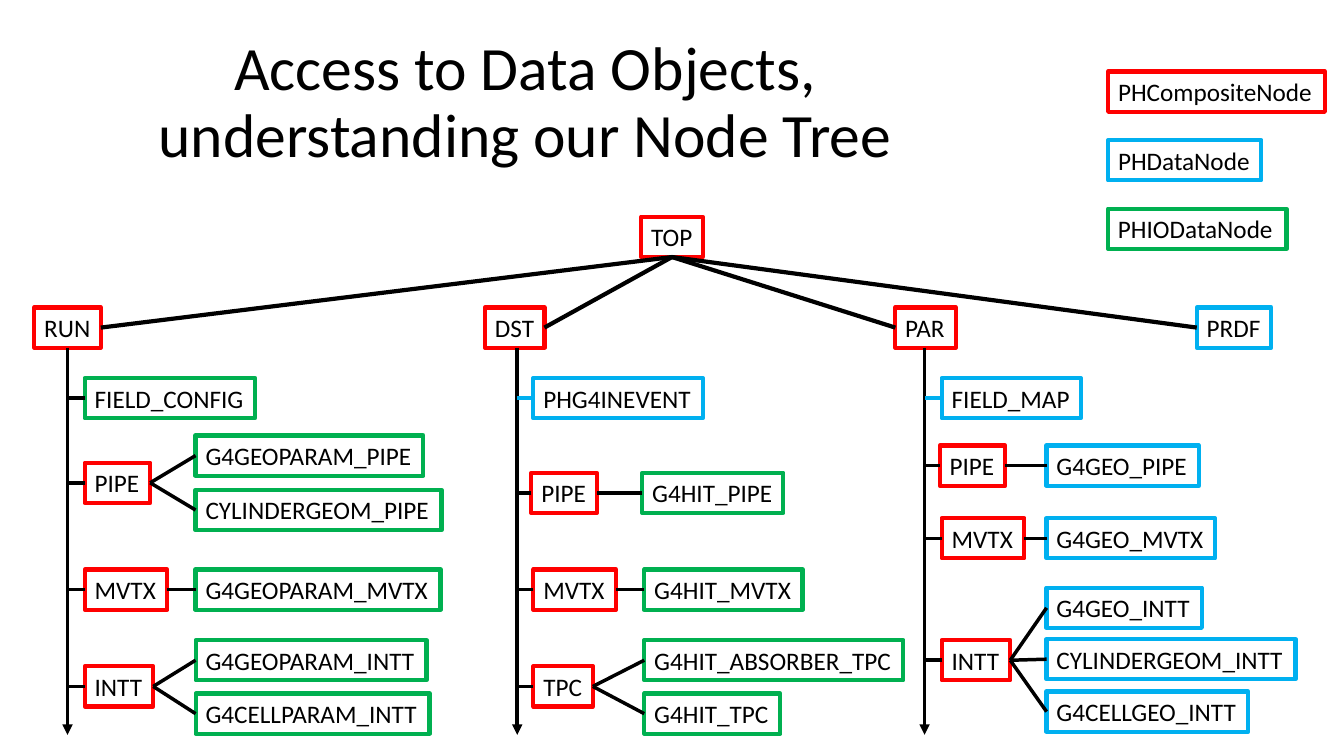
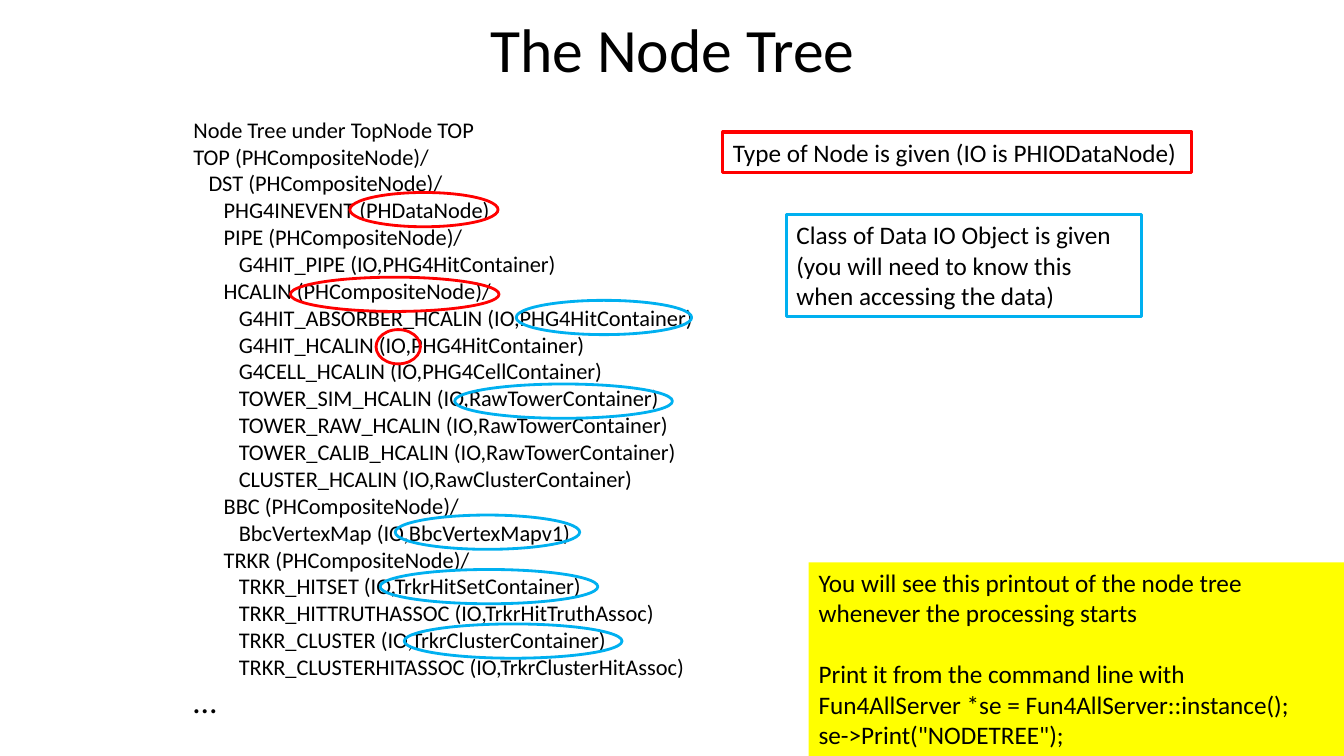
from lxml import etree
from pptx import Presentation
from pptx import util as u
from pptx.dml.color import RGBColor
from pptx.enum import shapes, text
from pptx.oxml.ns import qn

FONT = "Calibri"
BLACK, WHITE, YELLOW = "000000", "FFFFFF", "FFFF00"
COMPOSITE, DATA, IO = "FF0000", "00B0F0", "00B050"
NODE_HEIGHT = 0.4
LEVEL_INDENT = 0.15
TITLE_ONLY = 5


def color(value):
    return RGBColor.from_string(value)


def write(para, words, size=18, align=text.PP_ALIGN.LEFT, indent=0, before=0):
    """Fill one paragraph with formatted text."""
    if indent:
        properties = para._p.get_or_add_pPr()
        properties.set("marL", str(u.Inches(indent)))
        properties.set("indent", "0")
    para.alignment = align
    if before:
        para.space_before = u.Pt(before)
    span = para.add_run()
    span.text = words
    span.font.name = FONT
    span.font.size = u.Pt(size)
    span.font.color.rgb = color(BLACK)


def add_title(page, words, left, top, width, height):
    title = page.shapes.title
    title.left, title.top = u.Inches(left), u.Inches(top)
    title.width, title.height = u.Inches(width), u.Inches(height)
    frame = title.text_frame
    frame.auto_size = text.MSO_AUTO_SIZE.NONE
    frame.vertical_anchor = text.MSO_ANCHOR.MIDDLE
    frame.paragraphs[0].line_spacing = 0.9
    write(frame.paragraphs[0], words, size=44, align=text.PP_ALIGN.CENTER)


def add_box(page, paragraphs, left, top, width, height=NODE_HEIGHT,
            fill=None, line=None, weight=3, wrap=False):
    """Text box; each paragraph is a text with its format options."""
    box = page.shapes.add_textbox(u.Inches(left), u.Inches(top),
                                  u.Inches(width), u.Inches(height))
    if fill:
        box.fill.solid()
        box.fill.fore_color.rgb = color(fill)
    if line:
        box.line.color.rgb = color(line)
        box.line.width = u.Pt(weight)
    frame = box.text_frame
    frame.word_wrap = wrap
    frame.auto_size = text.MSO_AUTO_SIZE.SHAPE_TO_FIT_TEXT
    for index, (words, options) in enumerate(paragraphs):
        para = frame.add_paragraph() if index else frame.paragraphs[0]
        write(para, words, **options)
    return box


def add_node(page, name, line, left, top, width):
    add_box(page, [(name, {})], left, top, width, line=line)


def add_line(page, start, end, line=BLACK, weight=2.5, arrow=False):
    ends = [u.Inches(value) for value in (*start, *end)]
    link = page.shapes.add_connector(shapes.MSO_CONNECTOR.STRAIGHT, *ends)
    link.line.color.rgb = color(line)
    link.line.width = u.Pt(weight)
    if arrow:
        outline = link.line._get_or_add_ln()
        etree.SubElement(outline, qn("a:tailEnd"), type="triangle")
    etree.SubElement(link._element.spPr, qn("a:effectLst"))


def add_oval(page, line, left, top, width, height=0.34):
    oval = page.shapes.add_shape(shapes.MSO_SHAPE.OVAL, u.Inches(left), u.Inches(top),
                                 u.Inches(width), u.Inches(height))
    oval.shadow.inherit = False
    oval.fill.background()
    oval.line.color.rgb = color(line)
    oval.line.width = u.Pt(2)


# Top of the tree: name, kind, left, width
ROOTS = [
    ("RUN", COMPOSITE, 0.34, 0.66),
    ("DST", COMPOSITE, 4.81, 0.59),
    ("PAR", COMPOSITE, 8.88, 0.6),
    ("PRDF", DATA, 11.87, 0.74),
]

# Branches: name, kind, offset from spine, offset from root row, width,
# offset of children, children (name, offset from root row, width)
RUN_BRANCHES = [
    ("FIELD_CONFIG", IO, 0.17, 0.7, 1.69, 0, []),
    ("PIPE", COMPOSITE, 0.17, 1.54, 0.65, 1.27,
     [("G4GEOPARAM_PIPE", 1.27, 2.26), ("CYLINDERGEOM_PIPE", 1.81, 2.44)]),
    ("MVTX", COMPOSITE, 0.17, 2.6, 0.82, 1.27, [("G4GEOPARAM_MVTX", 2.6, 2.43)]),
    ("INTT", COMPOSITE, 0.17, 3.56, 0.68, 1.27,
     [("G4GEOPARAM_INTT", 3.3, 2.29), ("G4CELLPARAM_INTT", 3.83, 2.32)]),
]
DST_BRANCHES = [
    ("PHG4INEVENT", DATA, 0.16, 0.7, 1.68, 0, []),
    ("PIPE", COMPOSITE, 0.14, 1.64, 0.65, 1.24, [("G4HIT_PIPE", 1.64, 1.4)]),
    ("MVTX", COMPOSITE, 0.16, 2.6, 0.82, 1.26, [("G4HIT_MVTX", 2.6, 1.57)]),
    ("TPC", COMPOSITE, 0.16, 3.56, 0.59, 1.26,
     [("G4HIT_ABSORBER_TPC", 3.3, 2.57), ("G4HIT_TPC", 3.83, 1.35)]),
]
PAR_BRANCHES = [
    ("FIELD_MAP", DATA, 0.17, 0.7, 1.38, 0, []),
    ("PIPE", COMPOSITE, 0.15, 1.37, 0.65, 1.21, [("G4GEO_PIPE", 1.37, 1.51)]),
    ("MVTX", COMPOSITE, 0.17, 2.09, 0.82, 1.21, [("G4GEO_MVTX", 2.09, 1.67)]),
    ("INTT", COMPOSITE, 0.17, 3.3, 0.68, 1.21,
     [("G4GEO_INTT", 2.78, 1.54), ("CYLINDERGEOM_INTT", 3.29, 2.47),
      ("G4CELLGEO_INTT", 3.81, 2)]),
]


def draw_roots(page, left, top, width, root_top):
    """TOP node with a line to the near side of each root."""
    add_node(page, "TOP", COMPOSITE, left, top, width)
    hub = (left + width / 2, top + NODE_HEIGHT)
    for name, kind, root_left, root_width in ROOTS:
        add_node(page, name, kind, root_left, root_top, root_width)
        is_left = root_left < left
        near_side = root_left + root_width if is_left else root_left
        add_line(page, hub, (near_side, root_top + NODE_HEIGHT / 2), weight=3)


def draw_column(page, spine, top, branches, child_kind):
    """Downward arrow with its branches and their children."""
    middle = NODE_HEIGHT / 2
    add_line(page, (spine, top + NODE_HEIGHT), (spine, top + 4.24), arrow=True)
    for name, kind, shift, drop, width, child_shift, children in branches:
        left, center = spine + shift, top + drop + middle
        add_node(page, name, kind, left, top + drop, width)
        add_line(page, (left, center), (spine, center), DATA if kind == DATA else BLACK)
        for child, child_drop, child_width in children:
            child_left, child_top = spine + child_shift, top + child_drop
            add_node(page, child, child_kind, child_left, child_top, child_width)
            add_line(page, (child_left, child_top + middle), (left + width, center))


def draw_legend(page, left, top, step=0.68):
    entries = [("PHCompositeNode", COMPOSITE, 2.15), ("PHDataNode", DATA, 1.52),
               ("PHIODataNode", IO, 1.77)]
    for row, (name, kind, width) in enumerate(entries):
        add_node(page, name, kind, left, top + row * step, width)


def build_diagram_slide(deck):
    page = deck.slides.add_slide(deck.slide_layouts[TITLE_ONLY])
    add_title(page, "Access to Data Objects, understanding our Node Tree",
              0.48, 0.31, 9.46, 1.45)
    root_top = 3.05
    draw_roots(page, 6.36, 2.15, 0.61, root_top)
    draw_column(page, 0.67, root_top, RUN_BRANCHES, IO)
    draw_column(page, 5.13, root_top, DST_BRANCHES, IO)
    draw_column(page, 9.17, root_top, PAR_BRANCHES, DATA)
    draw_legend(page, 10.99, 0.71)


# Printout: level, text
PRINTOUT = [
    (0, "Node Tree under TopNode TOP"),
    (0, "TOP (PHCompositeNode)/"),
    (1, "DST (PHCompositeNode)/"),
    (2, "PHG4INEVENT (PHDataNode)"),
    (2, "PIPE (PHCompositeNode)/"),
    (3, "G4HIT_PIPE (IO,PHG4HitContainer)"),
    (2, "HCALIN (PHCompositeNode)/"),
    (3, "G4HIT_ABSORBER_HCALIN (IO,PHG4HitContainer)"),
    (3, "G4HIT_HCALIN (IO,PHG4HitContainer)"),
    (3, "G4CELL_HCALIN (IO,PHG4CellContainer)"),
    (3, "TOWER_SIM_HCALIN (IO,RawTowerContainer)"),
    (3, "TOWER_RAW_HCALIN (IO,RawTowerContainer)"),
    (3, "TOWER_CALIB_HCALIN (IO,RawTowerContainer)"),
    (3, "CLUSTER_HCALIN (IO,RawClusterContainer)"),
    (2, "BBC (PHCompositeNode)/"),
    (3, "BbcVertexMap (IO,BbcVertexMapv1)"),
    (2, "TRKR (PHCompositeNode)/"),
    (3, "TRKR_HITSET (IO,TrkrHitSetContainer)"),
    (3, "TRKR_HITTRUTHASSOC (IO,TrkrHitTruthAssoc)"),
    (3, "TRKR_CLUSTER (IO,TrkrClusterContainer)"),
    (3, "TRKR_CLUSTERHITASSOC (IO,TrkrClusterHitAssoc)"),
]

# Ovals around node types and classes: kind, offset from printout, width
MARKS = [
    (COMPOSITE, 1.06, 1.65, 2.07),
    (COMPOSITE, 1.65, 0.81, 1.47),
    (COMPOSITE, 1.91, 2.17, 0.44),
    (DATA, 3.3, 1.88, 1.74),
    (DATA, 2.69, 2.71, 2.16),
    (DATA, 2.1, 4.01, 1.83),
    (DATA, 1.95, 4.55, 2.16),
    (DATA, 2.19, 5.09, 2.16),
]


def draw_printout(page, left, top, width, height):
    paragraphs = [(words, {"size": 16, "indent": level * LEVEL_INDENT})
                  for level, words in PRINTOUT]
    add_box(page, paragraphs + [("…", {"size": 24})], left, top, width, height)
    for kind, shift, drop, mark_width in MARKS:
        add_oval(page, kind, left + shift, top + drop, mark_width)


def draw_notes(page):
    add_box(page, [("Type of Node is given (IO is PHIODataNode)", {})],
            7.17, 1.31, 4.65, fill=WHITE, line=COMPOSITE, weight=2.25)
    add_box(page, [("Class of Data IO Object is given", {}),
                   ("(you will need to know this when accessing the data)", {})],
            7.8, 2.13, 3.52, 1.01, fill=WHITE, line=DATA, weight=2.25, wrap=True)
    add_box(page, [
        ("You will see this printout of the node tree whenever the processing starts", {}),
        ("Print it from the command line with", {"before": 22}),
        ("Fun4AllServer *se = Fun4AllServer::instance();", {}),
        ('se->Print("NODETREE");', {}),
    ], 8.02, 5.58, 5.31, 1.92, fill=YELLOW, wrap=True)


def build_printout_slide(deck):
    page = deck.slides.add_slide(deck.slide_layouts[TITLE_ONLY])
    add_title(page, "The Node Tree", 2.42, -0.1, 8.5, 1.25)
    draw_printout(page, 1.82, 1.1, 5.23, 6.16)
    draw_notes(page)


def main():
    deck = Presentation()
    deck.slide_width, deck.slide_height = u.Inches(13.33), u.Inches(7.5)
    build_diagram_slide(deck)
    build_printout_slide(deck)
    deck.save("out.pptx")


if __name__ == "__main__":
    main()
